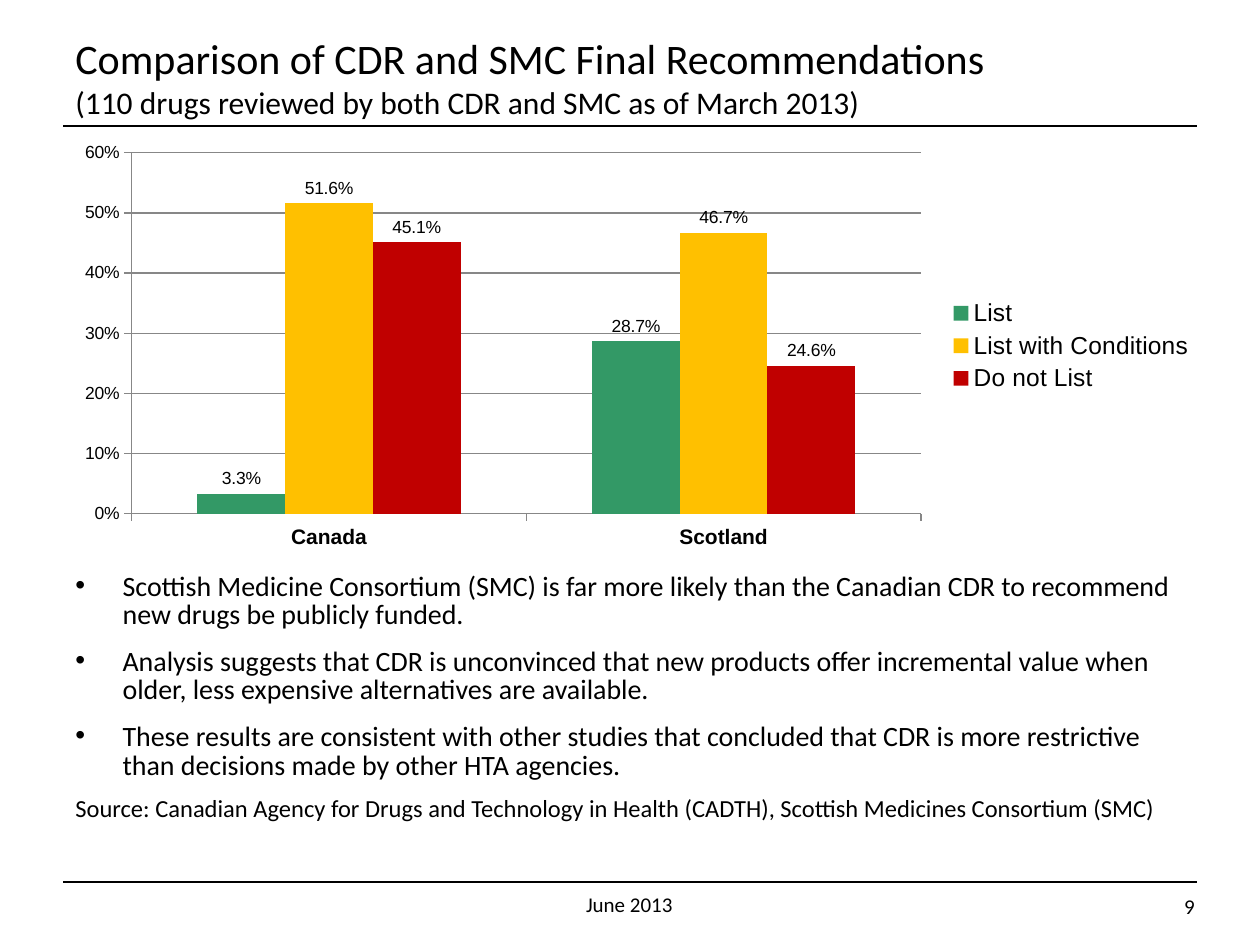
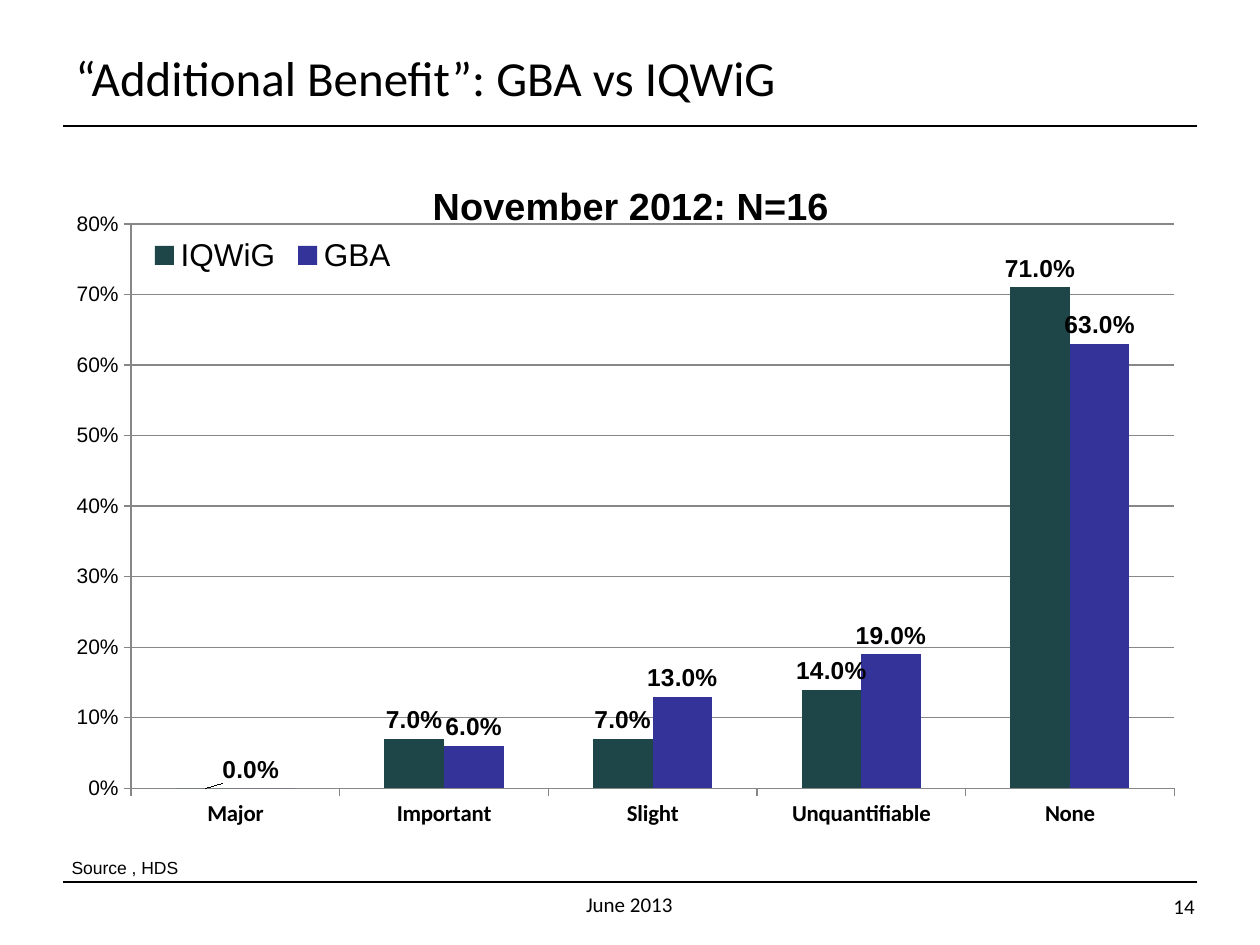
"""Build two slides that compare drug review outcomes between agencies."""
from dataclasses import dataclass

from lxml import etree
from pptx import Presentation
from pptx import util as u
from pptx.chart.data import CategoryChartData
from pptx.dml.color import RGBColor
from pptx.enum import chart as charts, shapes, text
from pptx.oxml import ns

Pt = u.Pt


@dataclass(frozen=True)
class Theme:
    ink: str = "000000"
    grid: str = "878787"
    green: str = "339966"
    amber: str = "FFC000"
    red: str = "C00000"
    teal: str = "1E4649"
    indigo: str = "333399"
    body_font: str = "Calibri"
    chart_font: str = "Arial"
    long_title: float = 24
    title: float = 28
    subtitle: float = 18
    body: float = 16
    source: float = 14
    footer: float = 12
    note: float = 10
    chart_title: float = 21.6


def assign(target, values):
    for name, value in values.items():
        setattr(target, name, value)


def add_element(parent, tag, index=None, **attributes):
    element = etree.Element(ns.qn(tag), attributes)
    parent.insert(len(parent) if index is None else index, element)
    return element


def place(parent, index, **fractions):
    for old in parent.findall(ns.qn("c:layout")):
        parent.remove(old)
    manual = add_element(add_element(parent, "c:layout", index), "c:manualLayout")
    if parent.tag == ns.qn("c:plotArea"):
        add_element(manual, "c:layoutTarget", val="inner")
    if parent.tag != ns.qn("c:dLbl"):
        for axis in ("x", "y"):
            add_element(manual, f"c:{axis}Mode", val="edge")
    for name, value in fractions.items():
        add_element(manual, f"c:{name}", val=str(value))


class Deck:
    def __init__(self, theme):
        self.theme = theme
        self.presentation = Presentation()
        assign(self.presentation, {"slide_width": Pt(720), "slide_height": Pt(540)})
        self.slide = None

    def style(self, font, size, name=None, bold=False):
        assign(font, {"size": Pt(size), "bold": bold, "name": name or self.theme.body_font})
        font.color.rgb = RGBColor.from_string(self.theme.ink)

    def start_slide(self, number, *title_lines):
        theme = self.theme
        self.slide = self.presentation.slides.add_slide(self.presentation.slide_layouts[6])
        for y in (72, 504):
            self.rule(36, y, 684)
        title = self.text_box(36, 21.6, 648, 44.64)
        title.vertical_anchor = text.MSO_ANCHOR.MIDDLE
        for index, (line, size) in enumerate(title_lines):
            if index:
                title.paragraphs[0].add_line_break()
            self.add_words(title.paragraphs[0], line, size)
        footers = (
            ("June 2013", 275.76, 506.16, 167.76, text.PP_ALIGN.CENTER),
            (str(number), 576, 506.88, 113.76, text.PP_ALIGN.RIGHT),
        )
        for words, left, top, width, alignment in footers:
            paragraph = self.text_box(left, top, width, 19).paragraphs[0]
            paragraph.alignment = alignment
            self.add_words(paragraph, words, theme.footer)

    def rule(self, left, y, right):
        line = self.slide.shapes.add_connector(
            shapes.MSO_CONNECTOR.STRAIGHT, Pt(left), Pt(y), Pt(right), Pt(y))
        line.line.width = Pt(0.75)
        line.line.color.rgb = RGBColor.from_string(self.theme.ink)
        add_element(line._element.spPr, "a:effectLst")

    def text_box(self, left, top, width, height):
        shape = self.slide.shapes.add_textbox(Pt(left), Pt(top), Pt(width), Pt(height))
        shape.text_frame.word_wrap = True
        return shape.text_frame

    def add_words(self, paragraph, words, size, name=None, bold=False):
        run = paragraph.add_run()
        run.text = words
        self.style(run.font, size, name, bold)

    def bullets(self, left, top, width, height, points, source):
        frame = self.text_box(left, top, width, height)
        lines = [(point, self.theme.body) for point in points] + [(source, self.theme.source)]
        for index, (words, size) in enumerate(lines):
            paragraph = frame.add_paragraph() if index else frame.paragraphs[0]
            if words != source:
                properties = paragraph._p.get_or_add_pPr()
                properties.set("marL", str(Pt(27)))
                properties.set("indent", str(-Pt(27)))
                add_element(properties, "a:buFont", typeface="Arial")
                add_element(properties, "a:buChar", char="•")
            assign(paragraph, {
                "line_spacing": 0.85,
                "space_before": Pt(size * 0.5 if index else 0),
                "space_after": Pt(size * 0.15),
            })
            self.add_words(paragraph, words, size)

    def note(self, left, top, width, height, words):
        frame = self.text_box(left, top, width, height)
        self.add_words(frame.paragraphs[0], words, self.theme.note, self.theme.chart_font)

    def columns(self, box, categories, series, maximum, sizes, plot_area, legend_position,
                category_font=None, bold_labels=False):
        theme = self.theme
        data = CategoryChartData(number_format="0%")
        data.categories = categories
        for name, values, _ in series:
            data.add_series(name, values)
        chart = self.slide.shapes.add_chart(
            charts.XL_CHART_TYPE.COLUMN_CLUSTERED, *map(Pt, box), data).chart
        self.style(chart.font, sizes["legend"], theme.chart_font)
        assign(chart, {"has_title": False, "has_legend": True})
        assign(chart.legend, {"position": legend_position, "include_in_layout": False})
        self.style(chart.legend.font, sizes["legend"], theme.chart_font)
        plot = chart.plots[0]
        assign(plot, {"vary_by_categories": False, "gap_width": 150, "overlap": 0})
        place(chart._chartSpace.xpath(".//c:plotArea")[0], 0, **plot_area)

        assign(chart.value_axis, {
            "minimum_scale": 0, "maximum_scale": maximum, "major_unit": 0.1,
            "has_major_gridlines": True})
        assign(chart.value_axis.tick_labels, {
            "number_format": "0%", "number_format_is_linked": False})
        for axis in (chart.value_axis, chart.category_axis):
            axis.major_tick_mark = charts.XL_TICK_MARK.OUTSIDE
        self.style(chart.value_axis.tick_labels.font, sizes["values"], theme.chart_font)
        self.style(chart.category_axis.tick_labels.font, sizes["categories"],
                   category_font or theme.chart_font, True)
        for line in (chart.value_axis.format.line, chart.category_axis.format.line,
                     chart.value_axis.major_gridlines.format.line):
            line.width = Pt(0.75)
            line.color.rgb = RGBColor.from_string(theme.grid)

        for column, (_, _, color) in zip(plot.series, series):
            column.format.fill.solid()
            column.format.fill.fore_color.rgb = RGBColor.from_string(color)
            assign(column.data_labels, {
                "show_value": True, "number_format": "0.0%", "number_format_is_linked": False,
                "position": charts.XL_LABEL_POSITION.OUTSIDE_END})
            self.style(column.data_labels.font, sizes["labels"], theme.chart_font, bold_labels)
        return chart

    def chart_title(self, chart, words, **position):
        paragraph = chart.chart_title.text_frame.paragraphs[0]
        self.add_words(paragraph, words, self.theme.chart_title, self.theme.chart_font, True)
        place(chart._chartSpace.xpath(".//c:title")[0], 1, **position)

    def shift_label(self, series, index, size, x, y):
        label = series.points[index].data_label
        self.style(label.font, size, self.theme.chart_font, True)
        label.position = charts.XL_LABEL_POSITION.OUTSIDE_END
        element = series.data_labels._element.find(ns.qn("c:dLbl"))
        place(element, 1, x=x, y=y)
        add_element(element, "c:numFmt", 2, formatCode="0.0%", sourceLinked="0")

    def hide_label(self, series, index):
        label = add_element(series.data_labels._element, "c:dLbl", 0)
        add_element(label, "c:idx", val=str(index))
        add_element(label, "c:delete", val="1")


def recommendations(deck):
    theme = deck.theme
    deck.start_slide(
        9,
        ("Comparison of CDR and SMC Final Recommendations", theme.long_title),
        ("(110 drugs reviewed by both CDR and SMC as of March 2013)", theme.subtitle))
    deck.columns(
        (36, 77.76, 653.76, 239.76),
        ("Canada", "Scotland"),
        (("List", (0.033, 0.287), theme.green),
         ("List with Conditions", (0.516, 0.467), theme.amber),
         ("Do not List", (0.451, 0.246), theme.red)),
        0.6,
        {"legend": 14, "values": 10, "categories": 12, "labels": 10},
        {"x": 0.06, "y": 0.04, "w": 0.69, "h": 0.86},
        charts.XL_LEGEND_POSITION.RIGHT)
    deck.bullets(
        36, 324, 642, 178.56,
        ("Scottish Medicine Consortium (SMC) is far more likely than the Canadian CDR "
         "to recommend new drugs be publicly funded.",
         "Analysis suggests that CDR is unconvinced that new products offer incremental "
         "value when older, less expensive alternatives are available.",
         "These results are consistent with other studies that concluded that CDR is more "
         "restrictive than decisions made by other HTA agencies."),
        "Source: Canadian Agency for Drugs and Technology in Health (CADTH), "
        "Scottish Medicines Consortium (SMC)")


def additional_benefit(deck):
    theme = deck.theme
    deck.start_slide(14, ("“Additional Benefit”: GBA vs IQWiG", theme.title))
    sizes = {"legend": 18, "values": 12, "categories": 13, "labels": 14}
    chart = deck.columns(
        (36, 84.24, 648, 398.16),
        ("Major", "Important", "Slight", "Unquantifiable", "None"),
        (("IQWiG", (0, 0.07, 0.07, 0.14, 0.71), theme.teal),
         ("GBA", (0, 0.06, 0.13, 0.19, 0.63), theme.indigo)),
        0.8,
        sizes,
        {"x": 0.06, "y": 0.11, "w": 0.92, "h": 0.81},
        charts.XL_LEGEND_POSITION.TOP,
        theme.body_font,
        True)
    deck.chart_title(chart, "November 2012: N=16", x=0.32, y=0.04)
    place(chart._chartSpace.xpath(".//c:legend")[0], 1, x=0.07, y=0.12, w=0.23, h=0.07)
    iqwig, gba = chart.plots[0].series
    deck.shift_label(iqwig, 0, sizes["labels"], 0.04, 0)
    deck.hide_label(gba, 0)
    deck.note(33.84, 486, 642, 19.44, "Source , HDS")


def main():
    deck = Deck(Theme())
    recommendations(deck)
    additional_benefit(deck)
    deck.presentation.save("out.pptx")


if __name__ == "__main__":
    main()
